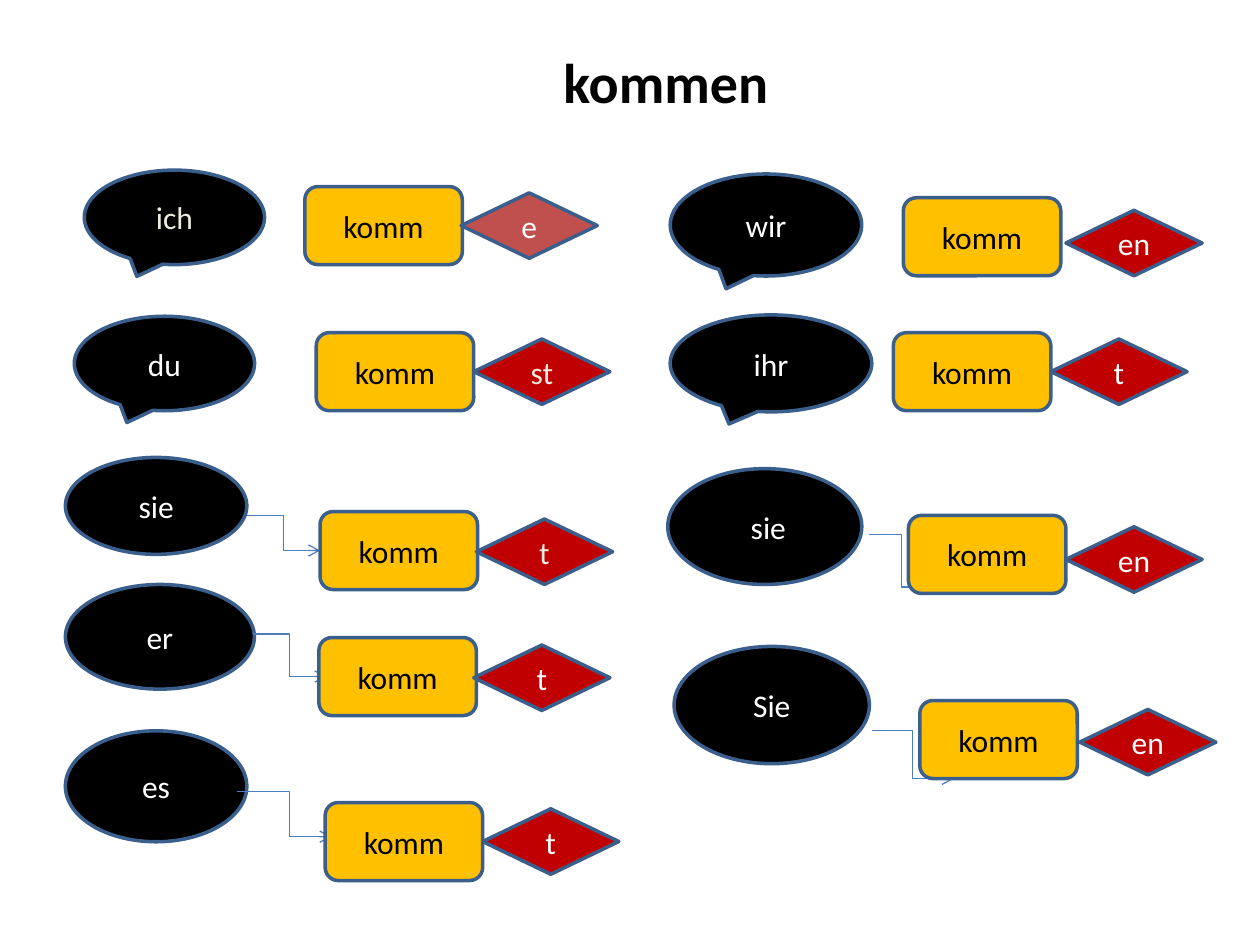
from lxml import etree
from pptx import Presentation
from pptx.dml.color import RGBColor
from pptx.enum.shapes import MSO_CONNECTOR, MSO_SHAPE as SHAPE
from pptx.enum.text import MSO_ANCHOR as ANCHOR, PP_ALIGN
from pptx.oxml.ns import qn
from pptx.util import Pt

COLORS = {
    "black": "000000", "white": "FFFFFF", "cream": "EEECE1", "amber": "FFC000",
    "red": "C00000", "rose": "C0504D", "outline": "3A5F8C", "arrow": "4B7EBC",
}
STEM_SIZE = (90, 44.6)
ENDING_SIZE = (77.8, 37.4)


def rgb(name):
    return RGBColor.from_string(COLORS[name])


def write(shape, text, size=18, color="white", bold=False, anchor=ANCHOR.MIDDLE):
    frame = shape.text_frame
    frame.word_wrap = True
    frame.vertical_anchor = anchor
    frame.text = text
    paragraph = frame.paragraphs[0]
    paragraph.alignment = PP_ALIGN.CENTER
    font = paragraph.runs[0].font
    font.name, font.size, font.bold = "Calibri", Pt(size), bold
    font.color.rgb = rgb(color)


presentation = Presentation()
presentation.slide_width, presentation.slide_height = Pt(720), Pt(540)
slide = presentation.slides.add_slide(presentation.slide_layouts[5])

verb = slide.shapes.title
verb.left, verb.top, verb.width, verb.height = Pt(220.3), Pt(23.8), Pt(320.4), Pt(46)
write(verb, "kommen", size=32, color="black", bold=True, anchor=ANCHOR.TOP)

CALLOUT, OVAL = SHAPE.OVAL_CALLOUT, SHAPE.OVAL
conjugation = [
    ("ich", "cream", CALLOUT, (48.2, 97.2, 103, 54), None,
     (174.2, 106.6), "e", "white", "rose", (263.5, 110.2)),
    ("du", "white", CALLOUT, (42.5, 180.7, 103, 54), None,
     (180.7, 190.1), "st", "cream", "red", (270.7, 193.7)),
    ("sie", "white", OVAL, (37.4, 261.4, 103.7, 55.4), (141.1, 294.5, 182.9, 314.6, 0.5),
     (182.9, 292.3), "t", "cream", "red", (272.2, 296.6)),
    ("er", "white", OVAL, (37.4, 334, 108, 59.8), (144.7, 362.2, 186.5, 386.6, 0.5),
     (182.2, 364.3), "t", "white", "red", (270.7, 368.6)),
    ("es", "white", OVAL, (37.4, 417.6, 103.7, 63.4), (135.4, 452.2, 189.4, 478.1, 0.56),
     (185.8, 458.6), "t", "white", "red", (275.8, 462.2)),
    ("wir", "white", CALLOUT, (383, 99.4, 109.4, 58.3), None,
     (516.2, 113), "en", "white", "red", (609.1, 120.2)),
    ("ihr", "white", CALLOUT, (383, 180, 115.2, 55.4), None,
     (510.5, 190.1), "t", "white", "red", (600.5, 193.7)),
    (" sie", "white", OVAL, (381.6, 267.8, 110.9, 66.2), (496.8, 305.3, 533.5, 335.5, 0.5),
     (519.1, 294.5), "en", "white", "red", (609.1, 301)),
    ("Sie", "white", OVAL, (385.2, 369.4, 111.6, 67), (498.2, 417.6, 545, 445, 0.5),
     (525.6, 400.3), "en", "white", "red", (617, 405.4)),
]

for (pronoun, pronoun_color, bubble, bubble_box, route,
     stem_at, ending, ending_color, ending_fill, ending_at) in conjugation:
    if route:
        *ends, bend = route
        arrow = slide.shapes.add_connector(MSO_CONNECTOR.ELBOW, *map(Pt, ends))
        arrow.line.color.rgb = rgb("arrow")
        arrow.line.width = Pt(0.75)
        etree.SubElement(arrow.line._get_or_add_ln(), qn("a:tailEnd"), type="arrow")
        properties = arrow._element.spPr
        etree.SubElement(properties, qn("a:effectLst"))
        guides = properties.find(qn("a:prstGeom")).find(qn("a:avLst"))
        etree.SubElement(guides, qn("a:gd"), name="adj1", fmla=f"val {round(bend * 100000)}")

    parts = [
        (bubble, bubble_box, "black", pronoun, pronoun_color),
        (SHAPE.ROUNDED_RECTANGLE, stem_at + STEM_SIZE, "amber", "komm", "black"),
        (SHAPE.FLOWCHART_DECISION, ending_at + ENDING_SIZE, ending_fill, ending, ending_color),
    ]
    for outline, box, fill, text, color in parts:
        part = slide.shapes.add_shape(outline, *map(Pt, box))
        part.shadow.inherit = False
        part.fill.solid()
        part.fill.fore_color.rgb = rgb(fill)
        part.line.color.rgb = rgb("outline")
        part.line.width = Pt(2)
        write(part, text, color=color)
    if route:
        bubble_element = slide.shapes[-3]._element
        bubble_element.addnext(arrow._element)

presentation.save("out.pptx")
